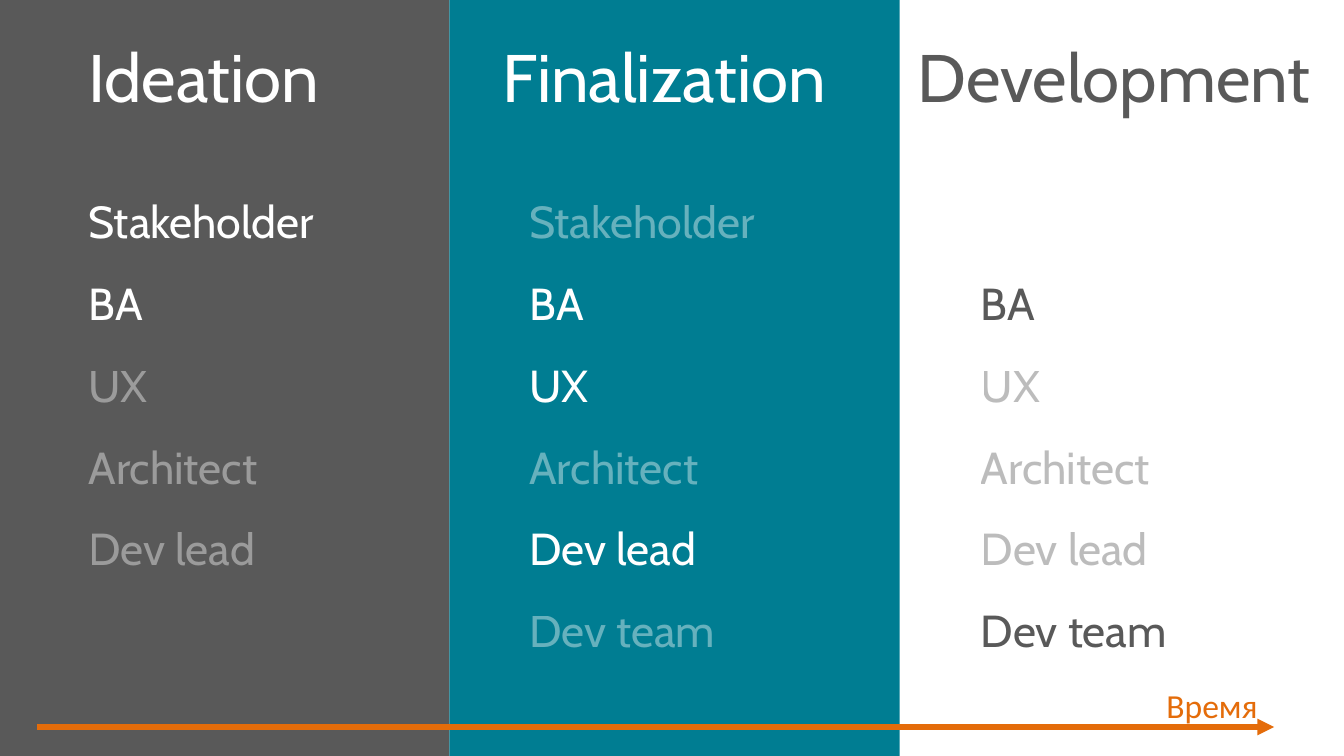
import pptx
import pptx.dml.color
import pptx.enum.shapes
import pptx.enum.text
import pptx.oxml
import pptx.oxml.ns
import pptx.util

Pt = pptx.util.Pt
WHITE, GRAY, TEAL, ORANGE = "FFFFFF", "595959", "007D92", "E46C0A"
ROLES = ["Stakeholder", "BA", "UX", "Architect", "Dev lead", "Dev team"]
PHASES = [
    ("Ideation", 40.3, 164.2, 40.3, WHITE, ROLES[:5], {"Stakeholder", "BA"}),
    ("Finalization", 262.1, 215.3, 276.5, WHITE, ROLES, {"BA", "UX", "Dev lead"}),
    ("Development", 484.6, 226.8, 518.4, GRAY, ROLES[1:], {"BA", "Dev team"}),
]
PANEL_WIDTH = 241.2
ROLE_TOP, ROLE_STEP = 100.5, 43.8


def color(value):
    return pptx.dml.color.RGBColor.from_string(value)


def add_element(parent, tag, **attributes):
    element = pptx.oxml.parse_xml(f"<{tag} {pptx.oxml.ns.nsdecls('a')}/>")
    for name, value in attributes.items():
        element.set(name, value)
    parent.append(element)


class PhaseSlide:
    font = "Cabin"

    def __init__(self, deck):
        self.page = deck.slides.add_slide(deck.slide_layouts[6])

    def panel(self, left, width, height, fill):
        box = self.page.shapes.add_shape(
            pptx.enum.shapes.MSO_SHAPE.RECTANGLE, Pt(left), Pt(0), Pt(width), Pt(height))
        box.shadow.inherit = False
        box.fill.solid()
        box.fill.fore_color.rgb = color(fill)
        box.line.fill.background()

    def text(self, words, left, top, width, height, size, ink,
             font=None, opacity=100, wrap=True):
        box = self.page.shapes.add_textbox(Pt(left), Pt(top), Pt(width), Pt(height))
        frame = box.text_frame
        frame.word_wrap = wrap
        frame.auto_size = pptx.enum.text.MSO_AUTO_SIZE.SHAPE_TO_FIT_TEXT
        para = frame.paragraphs[0]
        span = para.add_run()
        span.text = words
        span.font.name = font or self.font
        span.font.size = Pt(size)
        span.font.color.rgb = color(ink)
        if opacity < 100:
            tint = span.font.fill._xPr.find(".//" + pptx.oxml.ns.qn("a:srgbClr"))
            add_element(tint, "a:alpha", val=str(opacity * 1000))

    def arrow(self, left, right, top, ink, weight):
        line = self.page.shapes.add_connector(
            pptx.enum.shapes.MSO_CONNECTOR.STRAIGHT, Pt(left), Pt(top), Pt(right), Pt(top))
        line.line.color.rgb = color(ink)
        line.line.width = Pt(weight)
        add_element(line.line._get_or_add_ln(), "a:tailEnd", type="triangle")
        add_element(line._element.spPr, "a:effectLst")


def main():
    deck = pptx.Presentation()
    deck.slide_width, deck.slide_height = Pt(720), Pt(405)
    slide = PhaseSlide(deck)

    for index, fill in enumerate([GRAY, TEAL]):
        slide.panel(index * PANEL_WIDTH - 0.4, PANEL_WIDTH, 405, fill)

    for title, title_left, title_width, role_left, ink, roles, active in PHASES:
        slide.text(title, title_left, 15.1, title_width, 51, 36, ink)
        for role in roles:
            top = ROLE_TOP + ROLE_STEP * ROLES.index(role)
            opacity = 100 if role in active else 40
            slide.text(role, role_left, top, 164.2, 36, 24, ink, opacity=opacity)

    slide.arrow(20, 682.6, 389.5, ORANGE, 3)
    slide.text("Время", 617.8, 363.6, 64.1, 29, 18, ORANGE, font="Calibri", wrap=False)
    deck.save("out.pptx")


if __name__ == "__main__":
    main()
